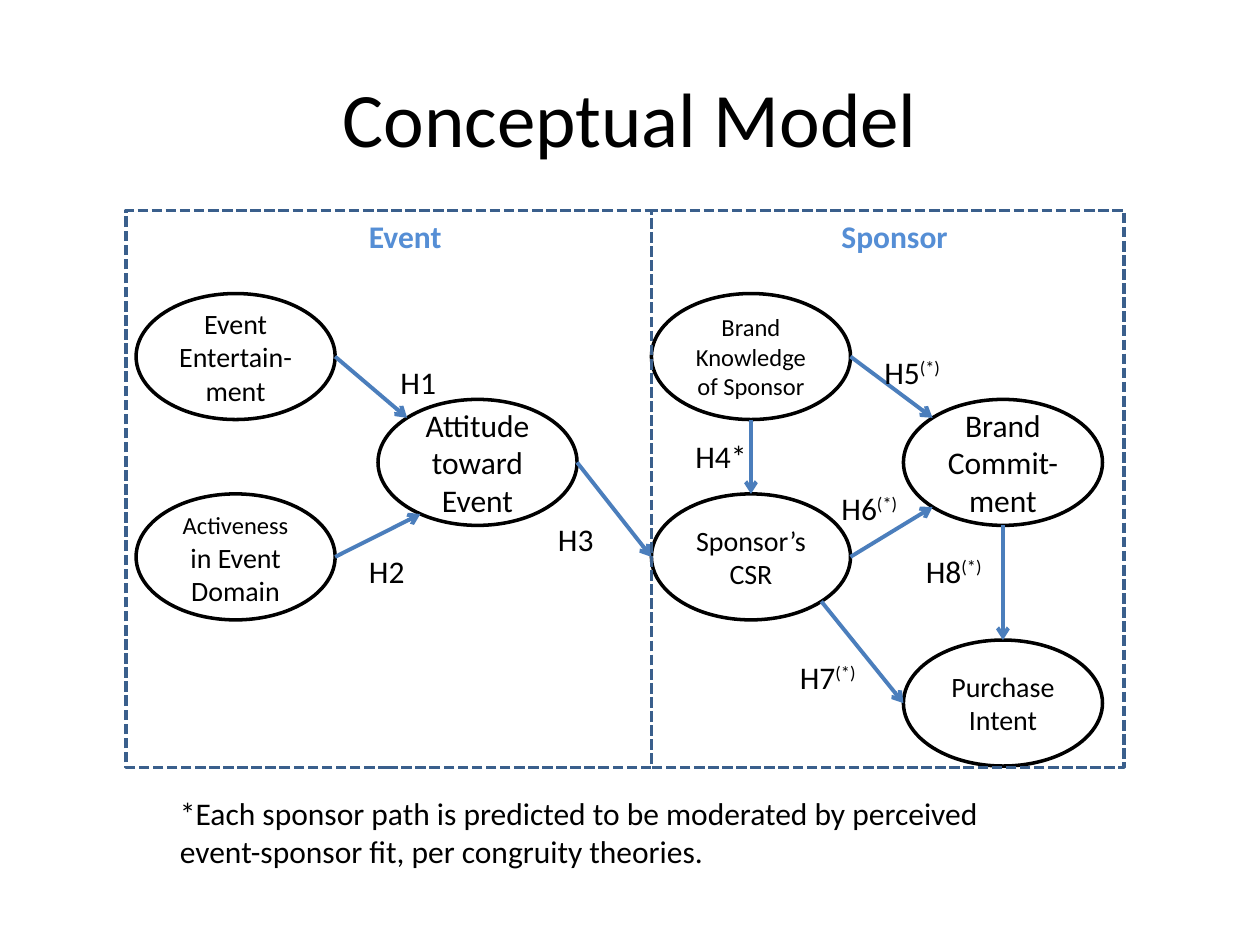
import math
from typing import NamedTuple

import pptx
import pptx.dml.color
import pptx.enum.dml
import pptx.enum.shapes
import pptx.enum.text
import pptx.oxml
import pptx.oxml.ns
import pptx.util
from pptx.util import Inches

COLORS = {"ink": "000000", "paper": "FFFFFF", "arrow": "4B7EBC",
          "frame": "3A5F8C", "head": "558ED5"}
FONT = "Calibri"
WIDE, HIGH = 1.58, 1.0  # size of every oval
RIGHT, DOWN_RIGHT, DOWN, DOWN_LEFT, LEFT, UP_LEFT, UP = 0, 45, 90, 135, 180, 225, 270
ALIGN = pptx.enum.text.PP_ALIGN
ANCHOR = pptx.enum.text.MSO_ANCHOR
SHAPE = pptx.enum.shapes.MSO_SHAPE


class Run(NamedTuple):
    text: str
    size: float = 18
    color: str = "ink"
    bold: bool = False
    sup: bool = False


class Oval(NamedTuple):
    left: float
    top: float
    runs: list[Run]


class Arrow(NamedTuple):
    tail: str
    leave: float  # angle on the first oval, clockwise from its right
    head: str
    enter: float


class Label(NamedTuple):
    left: float
    top: float
    width: float
    height: float
    runs: list[Run]


class Frame(NamedTuple):
    left: float
    width: float


STAR = Run("(*)", sup=True)

OVALS = {
    "fun": Oval(1.08, 2.33, [Run("Event Entertain-ment", 16)]),
    "active": Oval(1.08, 3.92, [Run("Activeness", 14), Run(" in Event Domain", 16)]),
    "attitude": Oval(3, 3.17, [Run("Attitude toward Event")]),
    "csr": Oval(5.17, 3.92, [Run("Sponsor’s CSR", 16)]),
    "know": Oval(5.17, 2.33, [Run("Brand Knowledge of Sponsor", 14)]),
    "commit": Oval(7.17, 3.17, [Run("Brand Commit-ment")]),
    "intent": Oval(7.17, 5.08, [Run("Purchase Intent", 16)]),
}

ARROWS = [
    Arrow("active", RIGHT, "attitude", 125),
    Arrow("fun", RIGHT, "attitude", UP_LEFT),
    Arrow("attitude", RIGHT, "csr", LEFT),
    Arrow("know", DOWN, "csr", UP),
    Arrow("know", RIGHT, "commit", UP_LEFT),
    Arrow("csr", RIGHT, "commit", DOWN_LEFT),
    Arrow("csr", DOWN_RIGHT, "intent", LEFT),
    Arrow("commit", DOWN, "intent", UP),
]

LABELS = [
    Label(1.33, 6.25, 6.67, 0.71, [Run(
        "*Each sponsor path is predicted to be moderated by perceived "
        "event-sponsor fit, per congruity theories.")]),
    Label(6.92, 2.75, 1, 0.71, [Run("H5"), STAR]),
    Label(2.83, 4.33, 0.83, 0.71, [Run("H2")]),
    Label(4.33, 4.08, 1, 0.71, [Run("H3")]),
    Label(5.42, 3.42, 0.67, 0.4, [Run("H4*")]),
    Label(3.08, 2.83, 0.83, 0.4, [Run("H1")]),
    Label(6.58, 3.83, 0.83, 0.71, [Run("H6"), STAR]),
    Label(6.25, 5.17, 1, 0.71, [Run("H7"), STAR]),
    Label(7.25, 4.33, 0.92, 0.71, [Run("H8"), STAR]),
]

FRAMES = [Frame(1, 4.17), Frame(5.17, 3.75)]

HEADS = [
    Label(2.83, 1.67, 1.17, 0.42, [Run("Event", color="head", bold=True)]),
    Label(6.58, 1.67, 1.17, 0.42, [Run("Sponsor", color="head", bold=True)]),
]


def tint(name: str) -> pptx.dml.color.RGBColor:
    return pptx.dml.color.RGBColor.from_string(COLORS[name])


def write(shape, runs: list[Run], align=ALIGN.LEFT, anchor=ANCHOR.TOP) -> None:
    frame = shape.text_frame
    frame.word_wrap = True
    frame.vertical_anchor = anchor
    para = frame.paragraphs[0]
    para.alignment = align
    for item in runs:
        run = para.add_run()
        run.text = item.text
        font = run.font
        font.name, font.size = FONT, pptx.util.Pt(item.size)
        font.bold = item.bold
        font.color.rgb = tint(item.color)
        if item.sup:
            run._r.get_or_add_rPr().set("baseline", "30000")


def draw_label(slide, label: Label, align=ALIGN.LEFT, anchor=ANCHOR.TOP) -> None:
    box = slide.shapes.add_textbox(*map(Inches, label[:4]))
    write(box, label.runs, align, anchor)


def draw_oval(slide, oval: Oval) -> None:
    shape = slide.shapes.add_shape(
        SHAPE.OVAL, Inches(oval.left), Inches(oval.top), Inches(WIDE), Inches(HIGH))
    shape.shadow.inherit = False
    shape.fill.solid()
    shape.fill.fore_color.rgb = tint("paper")
    shape.line.color.rgb = tint("ink")
    shape.line.width = pptx.util.Pt(2)
    write(shape, oval.runs, ALIGN.CENTER, ANCHOR.MIDDLE)


def rim(oval: Oval, angle: float) -> tuple:
    """Point on the edge of an oval."""
    turn = math.radians(angle)
    return (Inches(oval.left + WIDE / 2 * (1 + math.cos(turn))),
            Inches(oval.top + HIGH / 2 * (1 + math.sin(turn))))


def draw_arrow(slide, arrow: Arrow) -> None:
    line = slide.shapes.add_connector(
        pptx.enum.shapes.MSO_CONNECTOR.STRAIGHT,
        *rim(OVALS[arrow.tail], arrow.leave), *rim(OVALS[arrow.head], arrow.enter))
    line.line.color.rgb = tint("arrow")
    line.line.width = pptx.util.Pt(2.25)
    tip = pptx.oxml.parse_xml(
        f'<a:tailEnd {pptx.oxml.ns.nsdecls("a")} type="arrow"/>')
    line.line._get_or_add_ln().append(tip)
    line._element.spPr.append(pptx.oxml.parse_xml(
        f'<a:effectLst {pptx.oxml.ns.nsdecls("a")}/>'))


def draw_frame(slide, frame: Frame) -> None:
    shape = slide.shapes.add_shape(
        SHAPE.RECTANGLE, Inches(frame.left), Inches(1.67),
        Inches(frame.width), Inches(4.42))
    shape.shadow.inherit = False
    shape.fill.background()
    shape.line.color.rgb = tint("frame")
    shape.line.width = pptx.util.Pt(2)
    shape.line.dash_style = pptx.enum.dml.MSO_LINE.SQUARE_DOT


def main() -> None:
    deck = pptx.Presentation()
    deck.slide_width, deck.slide_height = Inches(10), Inches(7.5)
    slide = deck.slides.add_slide(deck.slide_layouts[6])

    # Title
    title = Label(0.5, 0.3, 9, 1.25, [Run("Conceptual Model", 44)])
    draw_label(slide, title, ALIGN.CENTER, ANCHOR.MIDDLE)

    # Model: concepts and the paths between them
    for oval in OVALS.values():
        draw_oval(slide, oval)
    for arrow in ARROWS:
        draw_arrow(slide, arrow)
    for label in LABELS:
        draw_label(slide, label)

    # Dashed areas and their headings
    for frame in FRAMES:
        draw_frame(slide, frame)
    for head in HEADS:
        draw_label(slide, head)

    deck.save("out.pptx")


if __name__ == "__main__":
    main()
